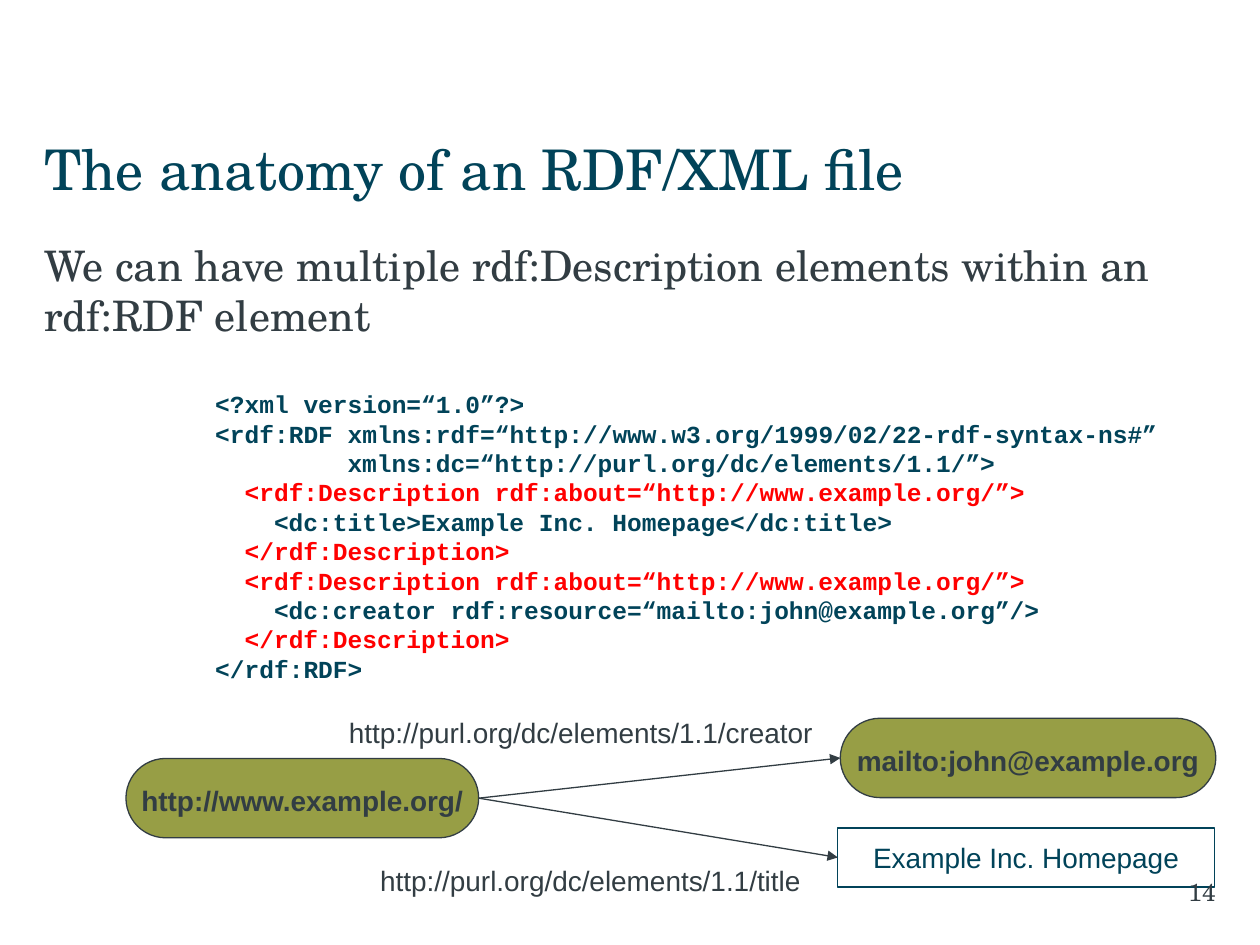
"""Build the slide on several rdf:Description elements in an RDF/XML file."""
from lxml import etree
from pptx import Presentation
from pptx import util as u
from pptx.dml.color import RGBColor
from pptx.enum import shapes, text
from pptx.oxml import ns

SERIF, SANS, MONO = "TeX Gyre Schola", "Arial", "Courier New"
NAVY, SLATE, RED, OLIVE, WHITE = "014359", "323D43", "FF0000", "979E45", "FFFFFF"
LEFT, CENTER, RIGHT = text.PP_ALIGN.LEFT, text.PP_ALIGN.CENTER, text.PP_ALIGN.RIGHT
TOP, MIDDLE = text.MSO_ANCHOR.TOP, text.MSO_ANCHOR.MIDDLE


def color(target, value):
    """Apply a hex colour to a fill or a font."""
    if hasattr(target, "solid"):
        target.solid()
        target.fore_color.rgb = RGBColor.from_string(value)
    else:
        target.color.rgb = RGBColor.from_string(value)


def write(shape, content, first=True, font=SANS, size=16, ink=SLATE, bold=False,
          align=LEFT, anchor=TOP, wrap=True, indent=0):
    """Add one formatted paragraph to a shape and return it."""
    frame = shape.text_frame
    frame.word_wrap = wrap
    frame.auto_size = text.MSO_AUTO_SIZE.NONE
    frame.vertical_anchor = anchor
    paragraph = frame.paragraphs[0] if first else frame.add_paragraph()
    paragraph.alignment = align
    if indent:
        paragraph._p.get_or_add_pPr().set("marL", str(u.Pt(indent)))
    run = paragraph.add_run()
    run.text = content
    run.font.name, run.font.size, run.font.bold = font, u.Pt(size), bold
    color(run.font, ink)
    return paragraph


presentation = Presentation()
presentation.slide_width, presentation.slide_height = u.Cm(25.4), u.Cm(19.05)
slide = presentation.slides.add_slide(presentation.slide_layouts[5])

title = slide.shapes.title
title.left, title.top, title.width, title.height = u.Cm(0.89), u.Cm(2.49), u.Cm(23.6), u.Cm(1.8)
title.text_frame.margin_left = 0
write(title, "The anatomy of an RDF/XML file", font=SERIF, size=32, ink=NAVY, anchor=MIDDLE)

body = slide.shapes.add_textbox(u.Cm(0.89), u.Cm(4.7), u.Cm(23.6), u.Cm(12.42))
body.text_frame.margin_left = 0
statement = write(body, "We can have multiple rdf:Description elements within an rdf:RDF element",
                  font=SERIF, size=24)
statement.space_after = u.Pt(18)

code_lines = [
    (0, "<?xml version=“1.0”?>", NAVY),
    (0, "<rdf:RDF xmlns:rdf=“http://www.w3.org/1999/02/22-rdf-syntax-ns#”", NAVY),
    (9, "xmlns:dc=“http://purl.org/dc/elements/1.1/”>", NAVY),
    (2, "<rdf:Description rdf:about=“http://www.example.org/”>", RED),
    (4, "<dc:title>Example Inc. Homepage</dc:title>", NAVY),
    (2, "</rdf:Description>", RED),
    (2, "<rdf:Description rdf:about=“http://www.example.org/”>", RED),
    (4, "<dc:creator rdf:resource=“mailto:john@example.org”/>", NAVY),
    (2, "</rdf:Description>", RED),
    (0, "</rdf:RDF>", NAVY),
]
character_width = 8.4
code = slide.shapes.add_textbox(u.Cm(4.09), u.Cm(7.72), u.Cm(19.81), u.Cm(6.17))
for number, (depth, line, ink) in enumerate(code_lines):
    write(code, line, first=number == 0, font=MONO, size=14, ink=ink, bold=True,
          indent=depth * character_width)

rounded, plain = shapes.MSO_SHAPE.ROUNDED_RECTANGLE, shapes.MSO_SHAPE.RECTANGLE
nodes = []
for content, kind, left, top, width, height, fill, ink in [
    ("http://www.example.org/", rounded, 2.54, 15.29, 7.11, 1.6, OLIVE, SLATE),
    ("mailto:john@example.org", rounded, 16.94, 14.48, 7.57, 1.6, OLIVE, SLATE),
    ("Example Inc. Homepage", plain, 16.89, 16.69, 7.59, 1.19, WHITE, NAVY),
]:
    node = slide.shapes.add_shape(kind, u.Cm(left), u.Cm(top), u.Cm(width), u.Cm(height))
    node.shadow.inherit = False
    color(node.fill, fill)
    color(node.line, ink)
    node.line.width = u.Pt(0.75)
    if kind == rounded:
        node.adjustments[0] = 0.5
        node.text_frame.margin_top = u.Cm(0.23)
    write(node, content, ink=ink, bold=kind == rounded, align=CENTER, anchor=MIDDLE, wrap=False)
    nodes.append(node)

subject, *objects = nodes
left_site, right_site = 1, 3
for node in objects:
    arrow = slide.shapes.add_connector(shapes.MSO_CONNECTOR.STRAIGHT, 0, 0, 0, 0)
    arrow.begin_connect(subject, right_site)
    arrow.end_connect(node, left_site)
    color(arrow.line, SLATE)
    arrow.line.width = u.Pt(0.75)
    etree.SubElement(arrow.line._get_or_add_ln(), ns.qn("a:tailEnd"), type="triangle")
    etree.SubElement(arrow._element.spPr, ns.qn("a:effectLst"))

for content, left, top, width in [
    ("http://purl.org/dc/elements/1.1/creator", 6.68, 14.3, 10.06),
    ("http://purl.org/dc/elements/1.1/title", 7.32, 17.27, 9.17),
]:
    label = slide.shapes.add_textbox(u.Cm(left), u.Cm(top), u.Cm(width), u.Cm(0.94))
    write(label, content, align=CENTER, anchor=MIDDLE, wrap=False)

page_number = slide.shapes.add_textbox(u.Cm(19.63), u.Cm(17.55), u.Cm(4.88), u.Cm(0.86))
page_number.text_frame.margin_right = 0
write(page_number, "14", font=SERIF, size=14, align=RIGHT)

presentation.save("out.pptx")
